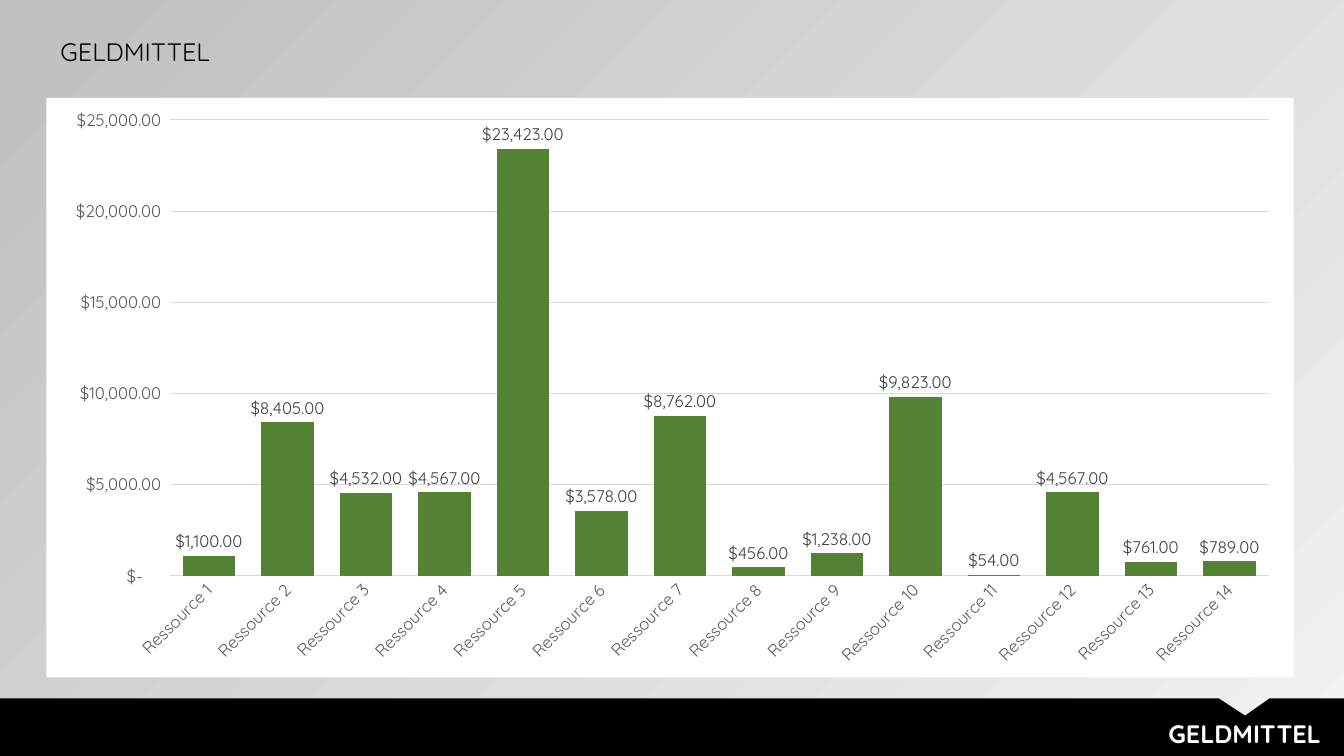
import pptx
import pptx.chart.data
import pptx.dml.color
import pptx.enum.chart
import pptx.enum.text
import pptx.oxml
import pptx.oxml.ns
import pptx.util
from dataclasses import dataclass
from pptx.util import Inches

FONT = "Quicksand"
HUES = {
    "black": "000000",
    "white": "FFFFFF",
    "green": "548235",
    "label": "404040",
    "axis": "595959",
    "grid": "D9D9D9",
    "light": "F2F2F2",
    "dark": "BFBFBF",
}
MONEY = '_("$"* #,##0.00_);_("$"* \\(#,##0.00\\);_("$"* "-"??_);_(@_)'
FUNDS = [1100, 8405, 4532, 4567, 23423, 3578, 8762,
         456, 1238, 9823, 54, 4567, 761, 789]
BAND = [(0, 6.93), (12.09, 6.93), (12.35, 7.1), (12.59, 6.93),
        (13.33, 6.93), (13.33, 7.5), (0, 7.5)]


@dataclass
class Label:
    text: str
    left: float
    top: float
    width: float
    height: float
    hue: str
    bold: bool
    align: pptx.enum.text.PP_ALIGN


HEAD = Label("GELDMITTEL", 0.5, 0.31, 4.44, 0.4, "black", False,
             pptx.enum.text.PP_ALIGN.LEFT)
FOOT = Label("GELDMITTEL", 4.14, 7.08, 9.06, 0.4, "white", True,
             pptx.enum.text.PP_ALIGN.RIGHT)


def color(name: str) -> pptx.dml.color.RGBColor:
    return pptx.dml.color.RGBColor.from_string(HUES[name])


def set_font(font, size: float, hue: str, bold: bool = False) -> None:
    font.name = FONT
    font.size = pptx.util.Pt(size)
    font.bold = bold
    font.color.rgb = color(hue)


def set_line(line, hue: str) -> None:
    line.color.rgb = color(hue)
    line.width = pptx.util.Pt(0.75)


def write_label(shape, label: Label) -> None:
    shape.left, shape.top = Inches(label.left), Inches(label.top)
    shape.width, shape.height = Inches(label.width), Inches(label.height)
    frame = shape.text_frame
    frame.text = label.text
    frame.word_wrap = True
    frame.auto_size = pptx.enum.text.MSO_AUTO_SIZE.SHAPE_TO_FIT_TEXT
    frame.vertical_anchor = pptx.enum.text.MSO_ANCHOR.TOP
    line = frame.paragraphs[0]
    line.alignment = label.align
    set_font(line.font, 18, label.hue, label.bold)


def paint_back(slide) -> None:
    fill = slide.background.fill
    fill.gradient()
    fill.gradient_angle = 135
    for stop, hue in zip(fill.gradient_stops, ("light", "dark")):
        stop.color.rgb = color(hue)


def draw_band(slide) -> None:
    """Draw the black footer with its notch."""
    dots = [(Inches(x), Inches(y)) for x, y in BAND]
    pen = slide.shapes.build_freeform(*dots[0])
    pen.add_line_segments(dots[1:], close=True)
    band = pen.convert_to_shape()
    band.shadow.inherit = False
    band.fill.solid()
    band.fill.fore_color.rgb = color("black")
    band.line.fill.background()


def style_axes(chart) -> None:
    cats, vals = chart.category_axis, chart.value_axis
    for axis in (cats, vals):
        axis.major_tick_mark = pptx.enum.chart.XL_TICK_MARK.NONE
        axis.minor_tick_mark = pptx.enum.chart.XL_TICK_MARK.NONE
        set_font(axis.tick_labels.font, 12, "axis")
    set_line(cats.format.line, "grid")
    vals.format.line.fill.background()
    vals.has_major_gridlines = True
    set_line(vals.major_gridlines.format.line, "grid")
    vals.minimum_scale, vals.maximum_scale = 0, 25000
    vals.major_unit = 5000
    vals.tick_labels.number_format = MONEY
    vals.tick_labels.number_format_is_linked = False
    body = chart.element.xpath(".//c:catAx/c:txPr/a:bodyPr")[0]
    body.set("rot", "-2700000")
    body.set("vert", "horz")


def fill_chart(chart, hue: str) -> None:
    """Give the chart area a plain fill and no outline."""
    names = pptx.oxml.ns.nsdecls("c", "a")
    area = pptx.oxml.parse_xml(
        f'<c:spPr {names}><a:solidFill><a:srgbClr val="{HUES[hue]}"/>'
        "</a:solidFill><a:ln><a:noFill/></a:ln></c:spPr>")
    chart.element.xpath("./c:txPr")[0].addprevious(area)


def draw_chart(slide) -> None:
    data = pptx.chart.data.CategoryChartData(number_format=MONEY)
    data.categories = [f"Ressource {n}" for n in range(1, len(FUNDS) + 1)]
    data.add_series("Series 1", FUNDS)
    chart = slide.shapes.add_chart(
        pptx.enum.chart.XL_CHART_TYPE.COLUMN_CLUSTERED,
        Inches(0.46), Inches(0.97), Inches(12.37), Inches(5.75), data).chart
    chart.has_title = False
    chart.has_legend = False
    set_font(chart.font, 10, "black")
    fill_chart(chart, "white")
    style_axes(chart)

    plot = chart.plots[0]
    plot.gap_width = 50
    plot.vary_by_categories = False
    bars = plot.series[0].format
    bars.fill.solid()
    bars.fill.fore_color.rgb = color("green")
    plot.has_data_labels = True
    tags = plot.data_labels
    tags.show_value = True
    tags.number_format = MONEY
    tags.number_format_is_linked = False
    tags.position = pptx.enum.chart.XL_LABEL_POSITION.OUTSIDE_END
    set_font(tags.font, 12, "label")


def main() -> None:
    deck = pptx.Presentation()
    deck.slide_width, deck.slide_height = Inches(13.33), Inches(7.5)
    slide = deck.slides.add_slide(deck.slide_layouts.get_by_name("Title Only"))
    paint_back(slide)
    draw_band(slide)
    write_label(slide.shapes.add_textbox(0, 0, 0, 0), FOOT)
    draw_chart(slide)
    write_label(slide.shapes.title, HEAD)
    deck.save("out.pptx")


if __name__ == "__main__":
    main()
